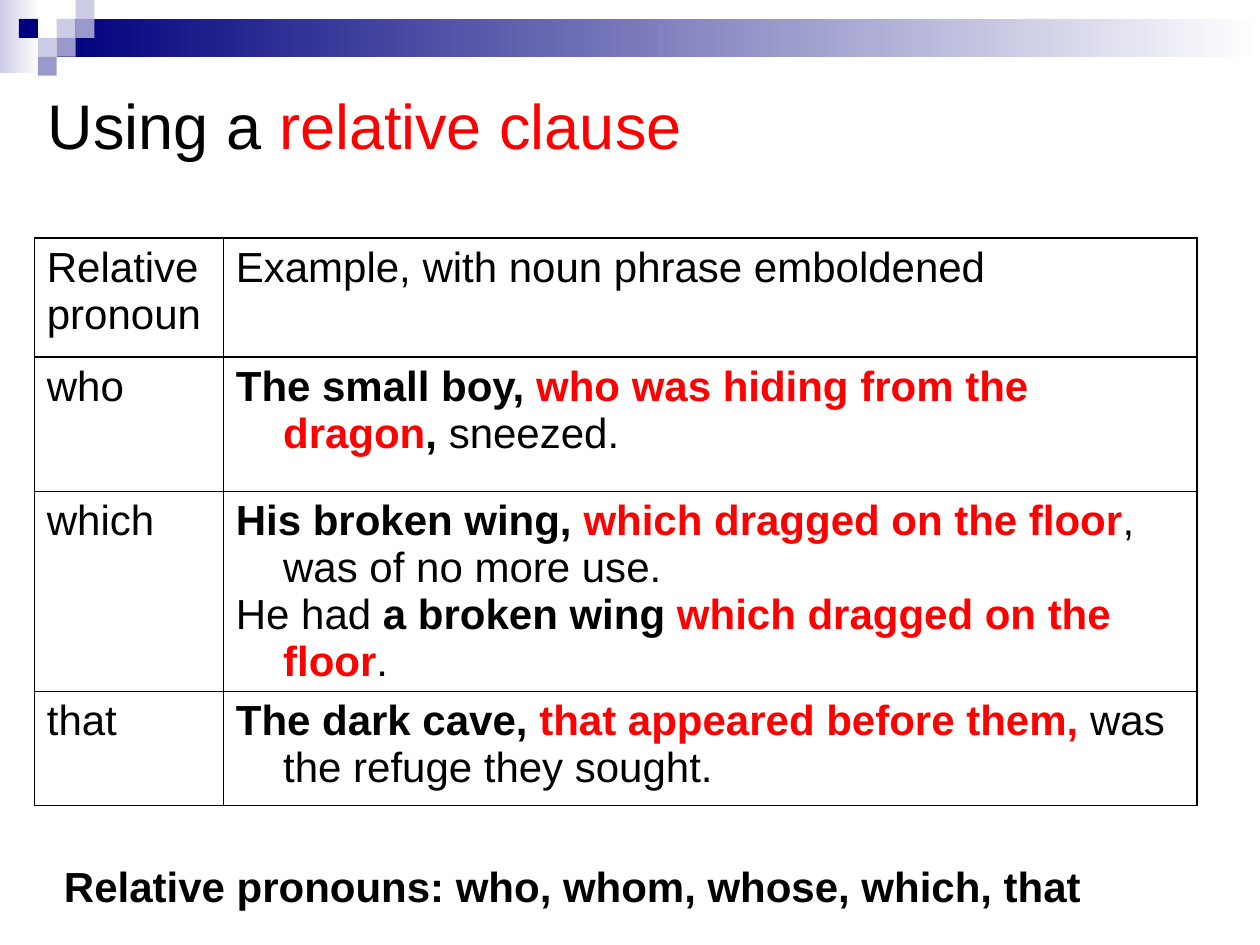
from lxml.etree import SubElement
from pptx import Presentation
from pptx.dml.color import RGBColor
from pptx.enum.shapes import MSO_SHAPE
from pptx.enum.text import MSO_ANCHOR, MSO_AUTO_SIZE, PP_ALIGN
from pptx.oxml.ns import qn
from pptx.util import Pt

BLACK, RED, WHITE = "000000", "FF0000", "FFFFFF"
NAVY, PALE, LILAC = "00007D", "CCCCE6", "9999CC"
UNIT = 10.8
TILES = [(3, 1, PALE), (4, 0, PALE), (4, 1, LILAC), (2, 2, PALE),
         (1, 1, NAVY), (3, 2, LILAC), (2, 3, LILAC)]
COLS = [108, 556.5]
HEIGHTS = [68, 77, 114, 65]
PLAIN, BOLD, CLAUSE = (BLACK, False), (BLACK, True), (RED, True)
ROWS = [
    ([[("Relative", PLAIN)], [("pronoun", PLAIN)]],
     [[("Example, with noun phrase emboldened", PLAIN)]]),
    ([[("who", PLAIN)]],
     [[("The small boy, ", BOLD), ("who was hiding from the dragon", CLAUSE),
       (",", BOLD), (" sneezed.", PLAIN)]]),
    ([[("which", PLAIN)]],
     [[("His broken wing, ", BOLD), ("which dragged on the floor", CLAUSE),
       (", was of no more use.", PLAIN)],
      [("He had ", PLAIN), ("a broken wing ", BOLD),
       ("which dragged on the floor", CLAUSE), (".", PLAIN)]]),
    ([[("that", PLAIN)]],
     [[("The dark cave, ", BOLD), ("that appeared before them, ", CLAUSE),
       ("was the refuge they sought.", PLAIN)]]),
]


def rgb(code):
    """Turn a hex string into a colour."""
    return RGBColor.from_string(code)


def write(para, runs, size):
    """Write styled runs into a paragraph."""
    for text, (color, bold) in runs:
        run = para.add_run()
        run.text = text
        font = run.font
        font.name, font.size, font.bold = "Arial", Pt(size), bold
        font.color.rgb = rgb(color)


def add_box(slide, box, color, end=None):
    """Add a plain rectangle, fading to the end colour if there is one."""
    shape = slide.shapes.add_shape(MSO_SHAPE.RECTANGLE, *map(Pt, box))
    shape.shadow.inherit = False
    shape.line.fill.background()
    if end:
        shape.fill.gradient()
        shape.fill.gradient_angle = 0
        for stop, code in zip(shape.fill.gradient_stops, (color, end)):
            stop.color.rgb = rgb(code)
    else:
        shape.fill.solid()
        shape.fill.fore_color.rgb = rgb(color)


def add_band(slide):
    """Draw the band and tiles along the top."""
    add_box(slide, (0, 0, 22.3, 41.8), PALE, WHITE)
    add_box(slide, (3 * UNIT, UNIT, 720 - 3 * UNIT, 2 * UNIT), NAVY, WHITE)
    for col, row, color in TILES:
        add_box(slide, (col * UNIT, row * UNIT, UNIT, UNIT), color)


def set_title(slide):
    """Place and fill the title."""
    title = slide.shapes.title
    title.left, title.top = Pt(20.2), Pt(37.4)
    title.width, title.height = Pt(657.4), Pt(90)
    frame = title.text_frame
    frame.vertical_anchor = MSO_ANCHOR.TOP
    frame.margin_top = Pt(12)
    para = frame.paragraphs[0]
    para.alignment = PP_ALIGN.LEFT
    write(para, [("Using a ", PLAIN), ("relative clause", (RED, False))], 36)


def add_edges(cell):
    """Give a cell thin black borders."""
    props = cell._tc.get_or_add_tcPr()
    for spot, side in enumerate(("a:lnL", "a:lnR", "a:lnT", "a:lnB")):
        line = SubElement(props, qn(side), w=str(Pt(1)))
        fill = SubElement(line, qn("a:solidFill"))
        SubElement(fill, qn("a:srgbClr"), val=BLACK)
        props.insert(spot, line)


def fill_cell(cell, paras):
    """Fill a cell with hanging paragraphs."""
    cell.fill.background()
    add_edges(cell)
    frame = cell.text_frame
    for i, runs in enumerate(paras):
        para = frame.add_paragraph() if i else frame.paragraphs[0]
        props = para._p.get_or_add_pPr()
        props.set("marL", str(Pt(27)))
        props.set("indent", str(Pt(-27)))
        write(para, runs, 24)


def add_grid(slide):
    """Add the table of pronouns and examples."""
    box = (19.6, 136, sum(COLS), sum(HEIGHTS))
    table = slide.shapes.add_table(len(ROWS), len(COLS), *map(Pt, box)).table
    table.first_row = table.horz_banding = False
    for col, width in zip(table.columns, COLS):
        col.width = Pt(width)
    for row, height, cells in zip(table.rows, HEIGHTS, ROWS):
        row.height = Pt(height)
        for cell, paras in zip(row.cells, cells):
            fill_cell(cell, paras)


def add_note(slide):
    """Add the list of pronouns at the foot."""
    box = slide.shapes.add_textbox(Pt(29.5), Pt(488), Pt(600.5), Pt(36))
    frame = box.text_frame
    frame.word_wrap = False
    frame.auto_size = MSO_AUTO_SIZE.SHAPE_TO_FIT_TEXT
    text = "Relative pronouns: who, whom, whose, which, that"
    write(frame.paragraphs[0], [(text, BOLD)], 24)


def main():
    """Build and save the slide."""
    deck = Presentation()
    deck.slide_width, deck.slide_height = Pt(720), Pt(540)
    slide = deck.slides.add_slide(deck.slide_layouts[5])
    add_band(slide)
    set_title(slide)
    add_grid(slide)
    add_note(slide)
    deck.save("out.pptx")


if __name__ == "__main__":
    main()
